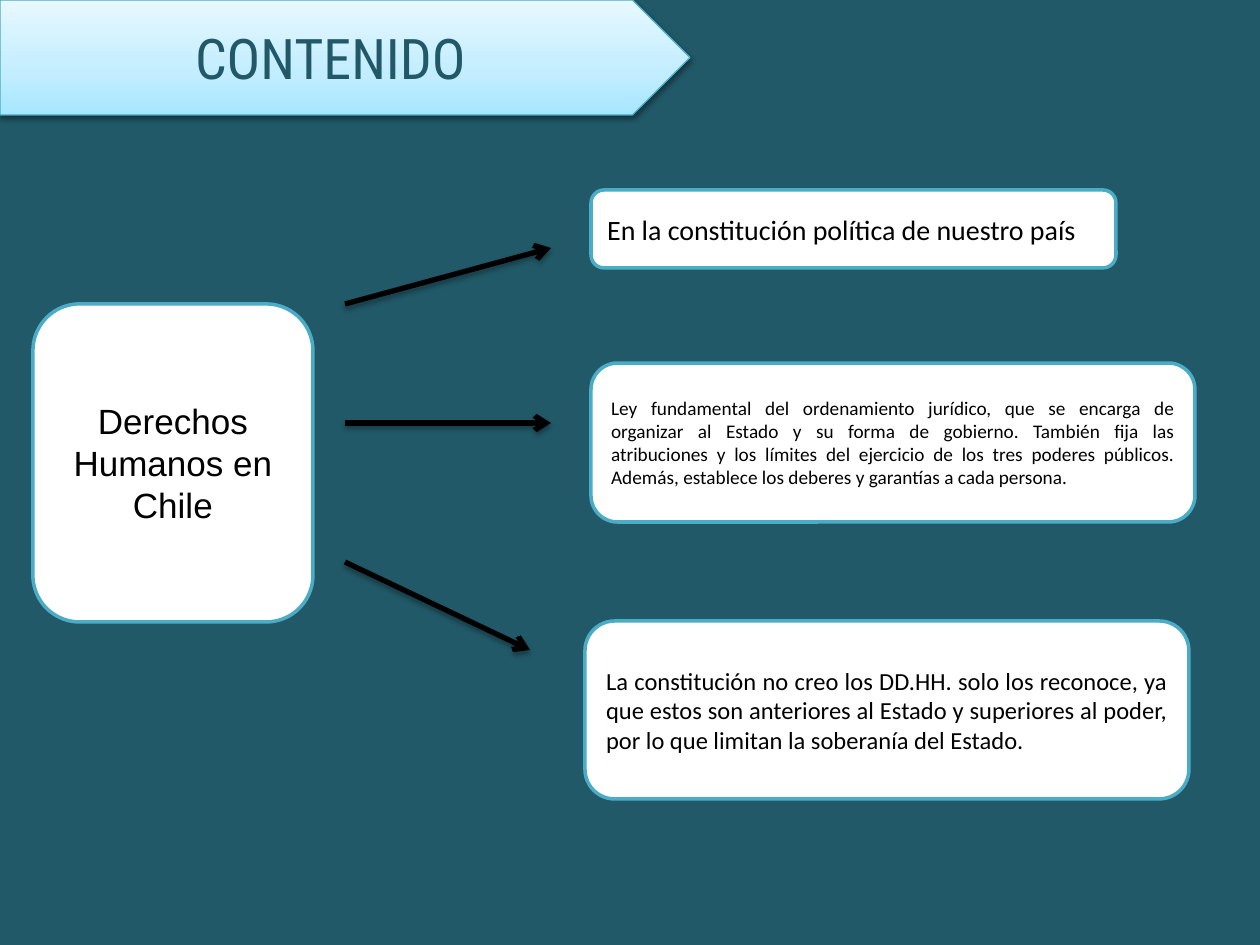
from copy import deepcopy
from dataclasses import dataclass

from lxml.etree import SubElement
from pptx import Presentation
from pptx.dml.color import RGBColor
from pptx.enum.shapes import MSO_CONNECTOR, MSO_SHAPE
from pptx.enum.text import MSO_ANCHOR, MSO_AUTO_SIZE, PP_ALIGN
from pptx.oxml.ns import qn
from pptx.util import Emu, Pt


@dataclass(frozen=True)
class Theme:
    background: str = "215968"
    box_fill: str = "FFFFFF"
    box_line: str = "4BACC6"
    banner_line: str = "46AAC5"
    banner_stops: tuple = ((0, "A7E6FF"), (0.35, "C1EDFF"), (1, "E7F8FF"))
    ink: str = "000000"
    title_font: str = "Roboto Condensed"
    topic_font: str = "Arial"
    body_font: str = "Calibri"
    title_size: int = 32
    topic_size: int = 20
    lead_size: int = 16
    note_size: int = 14
    small_size: int = 11


THEME = Theme()
EMU_PER_PX = 914400 / 126

DETAILS = [
    ((591, 190, 525, 78), THEME.lead_size, 0,
     "En la constitución política de nuestro país"),
    ((591, 363, 604, 159), THEME.small_size, 10,
     "Ley fundamental del ordenamiento jurídico, que se encarga de organizar "
     "al Estado y su forma de gobierno. También fija las atribuciones y los "
     "límites del ejercicio de los tres poderes públicos. Además, establece "
     "los deberes y garantías a cada persona."),
    ((585, 621, 604, 178), THEME.note_size, 10,
     "La constitución no creo los DD.HH. solo los reconoce, ya que estos son "
     "anteriores al Estado y superiores al poder, por lo que limitan la "
     "soberanía del Estado."),
]
ARROWS = [(345, 304, 551, 248), (345, 423, 551, 423), (345, 562, 530, 650)]


def px(*values):
    return [Emu(round(v * EMU_PER_PX)) for v in values]


def rgb(value):
    return RGBColor.from_string(value)


def write(shape, text, *, font, size, color=THEME.ink, align=PP_ALIGN.CENTER,
          after=0):
    tf = shape.text_frame
    tf.word_wrap = True
    tf.auto_size = MSO_AUTO_SIZE.NONE
    tf.vertical_anchor = MSO_ANCHOR.MIDDLE
    p = tf.paragraphs[0]
    p.alignment = align
    p.space_after = Pt(after)
    r = p.add_run()
    r.text = text
    r.font.name = font
    r.font.size = Pt(size)
    r.font.color.rgb = rgb(color)


def set_line(line, color, width):
    line.color.rgb = rgb(color)
    line.width = Pt(width)


def add_shadow(effects, *, alpha, distance):
    """Put a soft black shadow, falling straight down, in an effect list."""
    shadow = SubElement(effects, qn("a:outerShdw"), blurRad=str(Pt(3.1)),
                        dist=str(Pt(distance)), dir="5400000", rotWithShape="0")
    color = SubElement(shadow, qn("a:srgbClr"), val=THEME.ink)
    SubElement(color, qn("a:alpha"), val=str(alpha * 1000))


def add_banner(s):
    """Draw the pointed banner and set the slide title on it."""
    sp = s.shapes.add_shape(MSO_SHAPE.PENTAGON, *px(0, 0, 690, 115))
    fill = sp.fill
    fill.gradient()
    fill.gradient_angle = 90
    first = sp._element.spPr.find(".//" + qn("a:gs"))
    first.addnext(deepcopy(first))
    for stop, (position, color) in zip(fill.gradient_stops, THEME.banner_stops):
        stop.position = position
        stop.color.rgb = rgb(color)
    set_line(sp.line, THEME.banner_line, 0.75)
    sp.shadow.inherit = False
    add_shadow(sp._element.spPr.find(qn("a:effectLst")), alpha=38, distance=1.6)

    title = s.shapes.title
    title.left, title.top, title.width, title.height = px(0, 0, 661, 115)
    write(title, "CONTENIDO", font=THEME.title_font, size=THEME.title_size,
          color=THEME.background)
    title._element.addprevious(sp._element)


def add_box(s, bounds, text, **text_format):
    sp = s.shapes.add_shape(MSO_SHAPE.ROUNDED_RECTANGLE, *px(*bounds))
    sp.fill.solid()
    sp.fill.fore_color.rgb = rgb(THEME.box_fill)
    set_line(sp.line, THEME.box_line, 2)
    sp.shadow.inherit = False
    write(sp, text, **text_format)


def add_arrow(s, ends):
    line = s.shapes.add_connector(MSO_CONNECTOR.STRAIGHT, *px(*ends))
    set_line(line.line, THEME.ink, 3)
    spPr = line._element.spPr
    SubElement(spPr.find(qn("a:ln")), qn("a:tailEnd"), type="arrow")
    add_shadow(SubElement(spPr, qn("a:effectLst")), alpha=35, distance=1.8)


def main():
    prs = Presentation()
    prs.slide_width, prs.slide_height = px(1260, 945)
    s = prs.slides.add_slide(prs.slide_layouts[5])
    s.background.fill.solid()
    s.background.fill.fore_color.rgb = rgb(THEME.background)

    add_banner(s)
    add_box(s, (33, 304, 280, 318), "Derechos Humanos en Chile",
            font=THEME.topic_font, size=THEME.topic_size, after=10)
    for bounds, size, after, text in DETAILS:
        add_box(s, bounds, text, font=THEME.body_font, size=size,
                align=PP_ALIGN.JUSTIFY, after=after)
    for ends in ARROWS:
        add_arrow(s, ends)
    prs.save("out.pptx")


if __name__ == "__main__":
    main()
